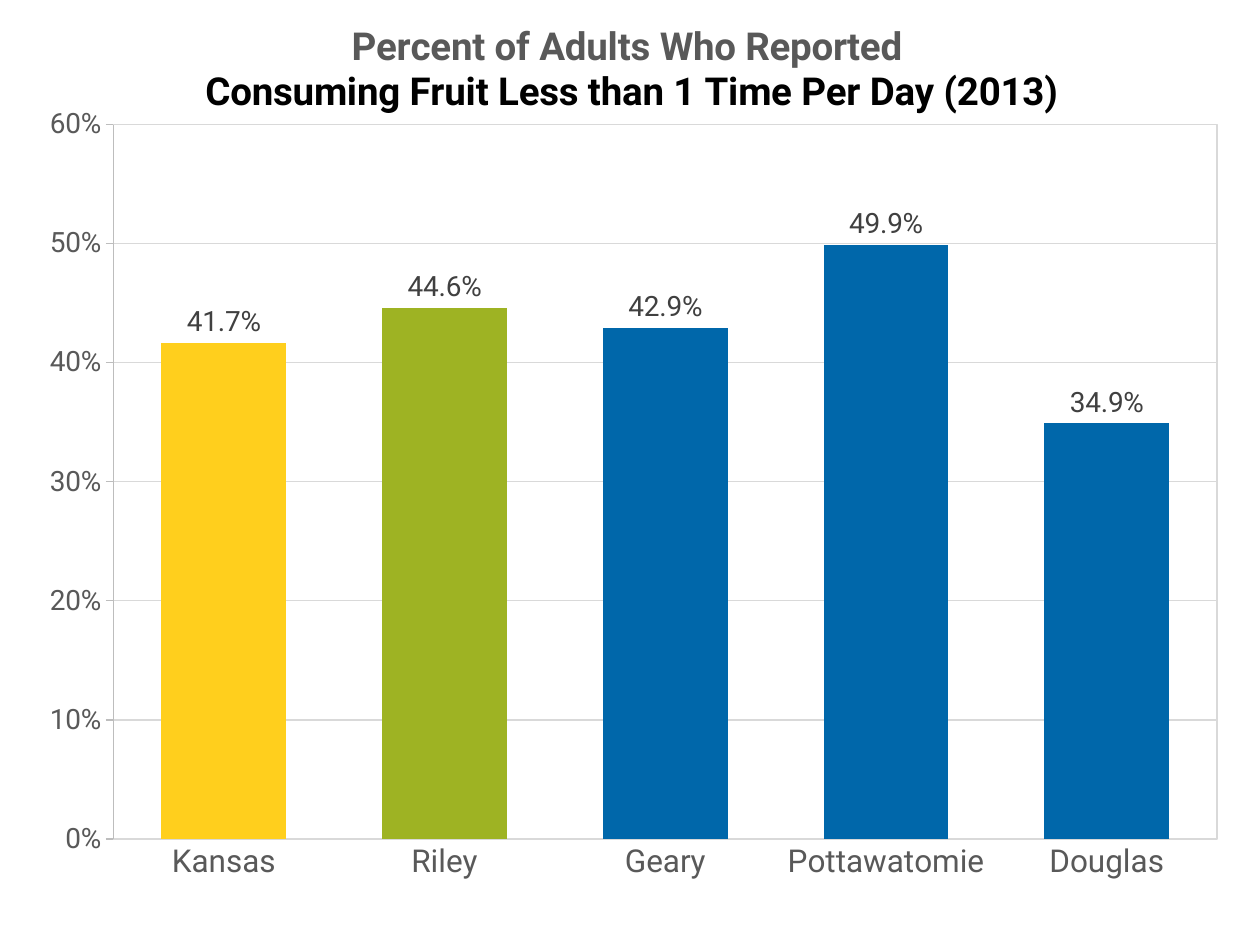
from lxml import etree
from pptx import Presentation
from pptx.chart.data import CategoryChartData
from pptx.dml.color import RGBColor
from pptx.enum import chart as charts, text
from pptx.oxml import parse_xml
from pptx.oxml.ns import nsdecls, qn
from pptx.util import Inches, Pt

BLACK = RGBColor(0x00, 0x00, 0x00)
DARK_GRAY = RGBColor(0x40, 0x40, 0x40)
GRAY = RGBColor(0x59, 0x59, 0x59)
AXIS_GRAY = RGBColor(0xBD, 0xBD, 0xBD)
GRID_GRAY = RGBColor(0xD9, 0xD9, 0xD9)
YELLOW = RGBColor(0xFF, 0xCF, 0x1D)
GREEN = RGBColor(0x9E, 0xB3, 0x23)
BLUE = RGBColor(0x00, 0x67, 0xAA)

COUNTIES = [
    ("Kansas", 0.417, YELLOW),
    ("Riley", 0.446, GREEN),
    ("Geary", 0.429, BLUE),
    ("Pottawatomie", 0.499, BLUE),
    ("Douglas", 0.349, BLUE),
]
HEADING = [
    ("Percent of Adults Who Reported ", GRAY),
    ("Consuming Fruit Less than 1 Time Per Day (2013)", BLACK),
]


def apply(target, values):
    for name, value in values.items():
        setattr(target, name, value)


def style_font(font, size, color, bold=False):
    apply(font, {"name": "Roboto", "size": Pt(size), "bold": bold})
    font.color.rgb = color


def style_line(line, color):
    line.color.rgb = color
    line.width = Pt(0.75)


def place(parent, index, **values):
    for old in parent.findall(qn("c:layout")):
        parent.remove(old)
    layout = parse_xml(f"<c:layout {nsdecls('c')}><c:manualLayout/></c:layout>")
    for name, value in values.items():
        etree.SubElement(layout[0], qn(f"c:{name}")).set("val", str(value))
    parent.insert(index, layout)


def add_heading(chart):
    frame = chart.chart_title.text_frame
    for number, (words, color) in enumerate(HEADING):
        line = frame.add_paragraph() if number else frame.paragraphs[0]
        line.alignment = text.PP_ALIGN.CENTER
        run = line.add_run()
        run.text = words
        style_font(run.font, 22, color, True)
    chart.chart_title.include_in_layout = False
    place(chart.chart_title._element, 1, xMode="edge", yMode="edge", x=0.16, y=0.02)


def style_axes(chart):
    counties, percent = chart.category_axis, chart.value_axis
    marks = charts.XL_TICK_MARK
    for axis, size, color, mark in (
        (counties, 18, GRID_GRAY, marks.NONE),
        (percent, 16, AXIS_GRAY, marks.OUTSIDE),
    ):
        apply(axis, {"major_tick_mark": mark, "minor_tick_mark": marks.NONE})
        style_font(axis.tick_labels.font, size, GRAY)
        style_line(axis.format.line, color)
    apply(percent, {"minimum_scale": 0, "maximum_scale": 0.6, "major_unit": 0.1})
    apply(percent.tick_labels, {"number_format": "0%", "number_format_is_linked": False})
    style_line(percent.major_gridlines.format.line, GRID_GRAY)


def style_bars(plot):
    apply(plot, {"gap_width": 77, "vary_by_categories": False, "has_data_labels": True})
    for number, (_, _, color) in enumerate(COUNTIES):
        fill = plot.series[0].points[number].format.fill
        fill.solid()
        fill.fore_color.rgb = color
    apply(plot.data_labels, {
        "show_value": True,
        "number_format": "0.0%",
        "number_format_is_linked": False,
        "position": charts.XL_LABEL_POSITION.OUTSIDE_END,
    })
    style_font(plot.data_labels.font, 16, DARK_GRAY)


def frame_plot(chart):
    area = chart._chartSpace.chart.plotArea
    place(area, 0, layoutTarget="inner", xMode="edge", yMode="edge",
          x=0.09, y=0.132, w=0.876, h=0.756)
    area.append(parse_xml(
        f'<c:spPr {nsdecls("c", "a")}><a:noFill/><a:ln w="{Pt(0.75)}"><a:solidFill>'
        f'<a:srgbClr val="{GRID_GRAY}"/></a:solidFill></a:ln></c:spPr>'))


def add_fruit_chart(slide, width, height):
    names, shares, _ = zip(*COUNTIES)
    data = CategoryChartData(number_format="0.0%")
    data.categories = names
    data.add_series("Series 1", shares)
    chart = slide.shapes.add_chart(
        charts.XL_CHART_TYPE.COLUMN_CLUSTERED, 0, 0, width, height, data).chart
    chart.has_legend = False
    apply(chart.font, {"name": "Calibri", "size": Pt(10)})
    chart.font.color.rgb = BLACK
    add_heading(chart)
    style_axes(chart)
    style_bars(chart.plots[0])
    frame_plot(chart)


def main():
    deck = Presentation()
    apply(deck, {"slide_width": Inches(10), "slide_height": Inches(7.5)})
    slide = deck.slides.add_slide(deck.slide_layouts[6])
    add_fruit_chart(slide, deck.slide_width, deck.slide_height)
    deck.save("out.pptx")


if __name__ == "__main__":
    main()
